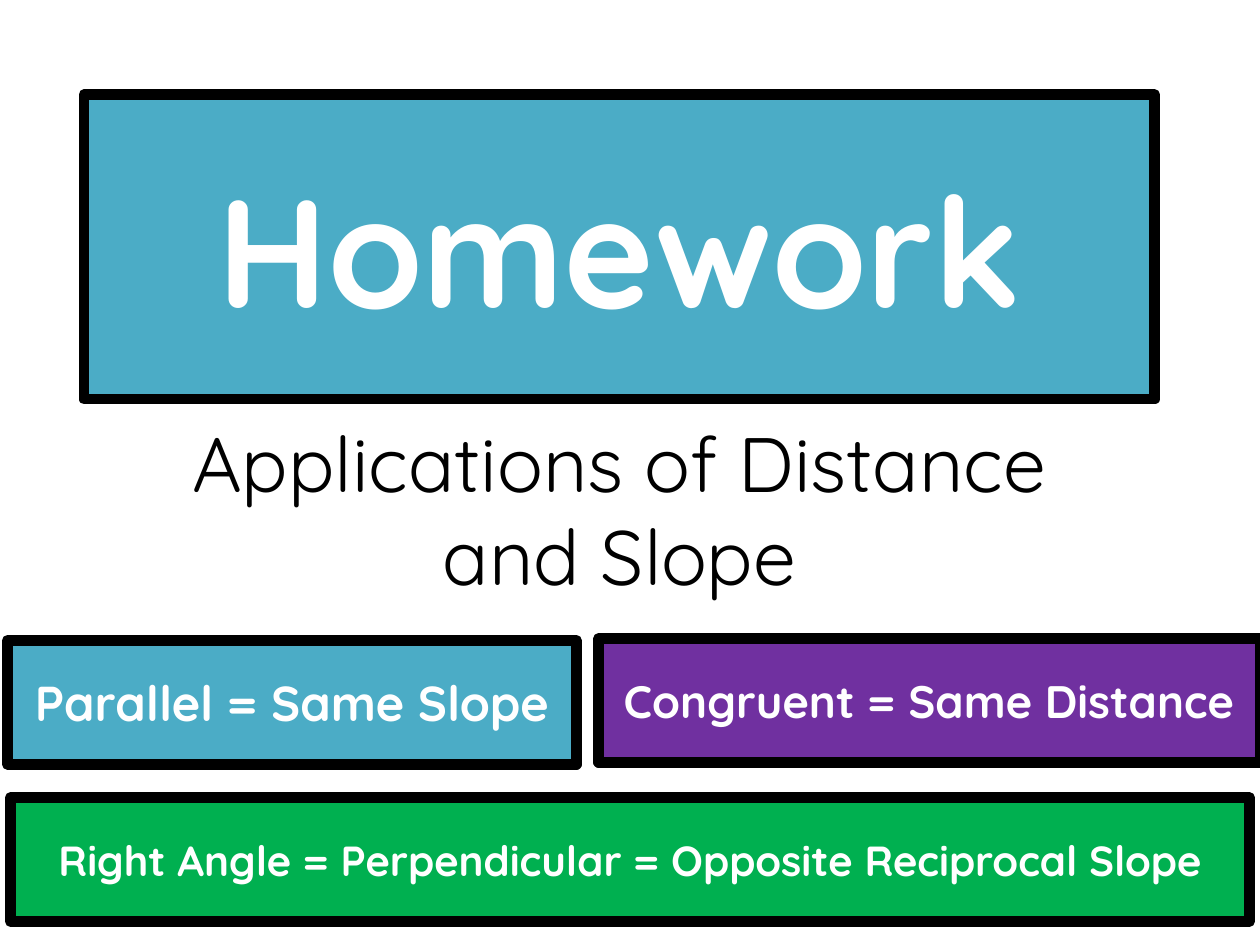
import pptx
import pptx.util
import pptx.dml.color
import pptx.enum.shapes
import pptx.enum.text

Cm = pptx.util.Cm
Pt = pptx.util.Pt
RGBColor = pptx.dml.color.RGBColor

BLACK = RGBColor(0x00, 0x00, 0x00)
WHITE = RGBColor(0xFF, 0xFF, 0xFF)
TEAL = RGBColor(0x4B, 0xAC, 0xC6)
GREEN = RGBColor(0x00, 0xB0, 0x50)
PURPLE = RGBColor(0x70, 0x30, 0xA0)
FONT = "Quicksand"

SUBTITLE = ("Applications of Distance and Slope", 44, (3.6, 8.26, 17.78, 4.87))
BOXES = [
    ("Homework", 88, TEAL, (1.69, 1.91, 21.59, 6.14)),
    ("Parallel = Same Slope", 28, TEAL, (0.15, 12.91, 11.47, 2.5)),
    ("Right Angle = Perpendicular = Opposite Reciprocal Slope", 24, GREEN,
     (0.21, 16.08, 24.98, 2.5)),
    ("Congruent = Same Distance", 26, PURPLE, (12.07, 12.87, 13.33, 2.5)),
]


def write_text(shape, text, size, color, bold, anchor):
    frame = shape.text_frame
    frame.word_wrap = True
    frame.vertical_anchor = anchor
    paragraph = frame.paragraphs[0]
    paragraph.alignment = pptx.enum.text.PP_ALIGN.CENTER
    run = paragraph.add_run()
    run.text = text
    run.font.name = FONT
    run.font.size = Pt(size)
    run.font.bold = bold
    run.font.color.rgb = color


def add_box(slide, text, size, fill, place):
    box = slide.shapes.add_shape(
        pptx.enum.shapes.MSO_SHAPE.RECTANGLE, *map(Cm, place))
    box.shadow.inherit = False
    box.fill.solid()
    box.fill.fore_color.rgb = fill
    box.line.color.rgb = BLACK
    box.line.width = Pt(6)
    write_text(box, text, size, WHITE, True, pptx.enum.text.MSO_ANCHOR.MIDDLE)


def main():
    presentation = pptx.Presentation()
    presentation.slide_width = Cm(25.4)
    presentation.slide_height = Cm(19.05)
    slide = presentation.slides.add_slide(presentation.slide_layouts[6])

    for text, size, fill, place in BOXES:
        add_box(slide, text, size, fill, place)

    text, size, place = SUBTITLE
    subtitle = slide.shapes.add_textbox(*map(Cm, place))
    write_text(subtitle, text, size, BLACK, False, pptx.enum.text.MSO_ANCHOR.TOP)

    presentation.save("out.pptx")


if __name__ == "__main__":
    main()
